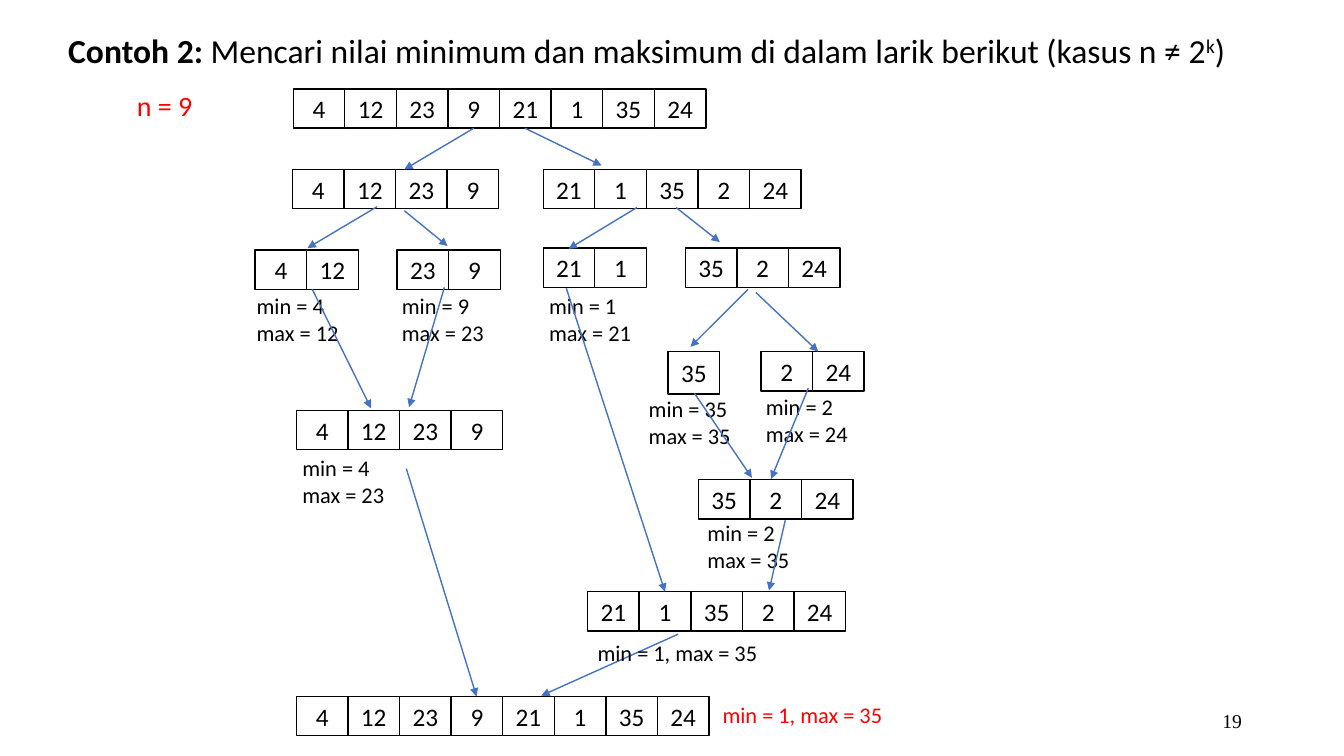
import pptx
import pptx.dml.color
import pptx.enum.shapes
import pptx.enum.text
import pptx.oxml
import pptx.oxml.ns
import pptx.util

Cm = pptx.util.Cm
Pt = pptx.util.Pt
ALIGN = pptx.enum.text.PP_ALIGN
COLORS = {"ink": "000000", "accent": "FF0000", "arrow": "4472C4"}
CELL_W, CELL_H = 1.3, 0.99
LINE_H, INSETS = 0.68, 0.27


def rgb(name):
    """Return the named colour."""
    return pptx.dml.color.RGBColor.from_string(COLORS[name])


def set_font(p, size, color="ink", name="Calibri"):
    """Set the font of a whole paragraph."""
    p.font.name = name
    p.font.size = Pt(size)
    p.font.color.rgb = rgb(color)


def add_label(slide, x, y, w, h, lines, size=16, color="ink"):
    """Add an unwrapped text box with one paragraph per line."""
    tf = slide.shapes.add_textbox(Cm(x), Cm(y), Cm(w), Cm(h)).text_frame
    tf.word_wrap = False
    tf.auto_size = pptx.enum.text.MSO_AUTO_SIZE.SHAPE_TO_FIT_TEXT
    tf.text = "\n".join(lines)
    for p in tf.paragraphs:
        set_font(p, size, color)
    return tf


def add_array(slide, x, y, values, height=CELL_H):
    """Draw an array as a row of adjoining cells."""
    for i, value in enumerate(values):
        sp = slide.shapes.add_shape(
            pptx.enum.shapes.MSO_SHAPE.RECTANGLE,
            Cm(x + i * CELL_W), Cm(y), Cm(CELL_W), Cm(height))
        sp.shadow.inherit = False
        sp.fill.background()
        sp.line.color.rgb = rgb("ink")
        sp.line.width = Pt(1)
        tf = sp.text_frame
        tf.vertical_anchor = pptx.enum.text.MSO_ANCHOR.MIDDLE
        p = tf.paragraphs[0]
        p.text = str(value)
        p.alignment = ALIGN.CENTER
        set_font(p, 18)


def add_arrow(slide, x1, y1, x2, y2):
    """Draw a straight arrow from the first point to the second."""
    line = slide.shapes.add_connector(
        pptx.enum.shapes.MSO_CONNECTOR.STRAIGHT, Cm(x1), Cm(y1), Cm(x2), Cm(y2))
    line.line.color.rgb = rgb("arrow")
    line.line.width = Pt(1)
    qn = pptx.oxml.ns.qn
    ln = line.line._get_or_add_ln()
    ln.append(ln.makeelement(qn("a:tailEnd"), {"type": "triangle"}))
    ln.addnext(ln.makeelement(qn("a:effectLst"), {}))


def add_header(slide, left, top):
    """Place the title and the array length."""
    tf = add_label(slide, left, top, 29.87, 1.27, [""], 24)
    p = tf.paragraphs[0]
    runs = ["Contoh 2: ",
            "Mencari nilai minimum dan maksimum di dalam larik berikut (kasus n ≠ 2",
            "k", ")"]
    for text in runs:
        p.add_run().text = text
    p.runs[0].font.bold = True
    p.runs[2].font._element.set("baseline", "30000")
    add_label(slide, left + 1.73, top + 1.47, 1.93, 1.12, ["n = 9"], 20, "accent")


def add_split(slide, left, top):
    """Draw the halving of the array down to one or two elements."""
    nodes = [
        (0.96, 0, [4, 12, 23, 9, 21, 1, 35, 24]),
        (0.94, 2.03, [4, 12, 23, 9]),
        (7.26, 2.03, [21, 1, 35, 2, 24]),
        (0, 4.06, [4, 12]),
        (3.58, 4.06, [23, 9]),
        (7.26, 4.01, [21, 1]),
        (10.84, 4.01, [35, 2, 24]),
        (10.41, 6.62, [35], 1.07),
        (12.75, 6.62, [2, 24]),
    ]
    results = [
        (-0.21, 5, 4, 12), (3.45, 5, 9, 23), (7.16, 5, 1, 21),
        (9.67, 7.59, 35, 35), (12.62, 7.54, 2, 24),
    ]
    arrows = [
        (5.51, 0.99, 3.76, 2.03), (6.8, 0.99, 8.73, 1.93),
        (3.07, 2.97, 1.32, 4.01), (3.76, 3.07, 4.85, 3.96),
        (9.62, 2.99, 7.9, 4.03), (10.61, 2.99, 11.71, 3.86),
        (12.62, 5.13, 14.19, 6.62), (12.42, 5.05, 10.97, 6.5),
    ]
    add_tree(slide, left, top, nodes, results, arrows)


def add_merge(slide, left, top):
    """Draw the merging of partial results up to the final answer."""
    nodes = [
        (0, 0, [4, 12, 23, 9]),
        (10.13, 1.75, [35, 2, 24]),
        (7.34, 4.57, [21, 1, 35, 2, 24]),
        (0, 7.21, [4, 12, 23, 9, 21, 1, 35, 24]),
    ]
    results = [(-0.1, 0.99, 4, 23), (10.11, 2.61, 2, 35)]
    arrows = [
        (0.4, -3.05, 1.88, -0.05), (3.73, -3.1, 2.84, -0.08),
        (10.03, -0.43, 11.48, 1.7), (12.9, -0.56, 11.96, 1.73),
        (6.8, -3.08, 9.29, 4.57), (12.32, 2.77, 11.91, 4.54),
        (2.77, 1.47, 4.54, 7.21), (9.62, 5.64, 6.17, 7.19),
    ]
    add_tree(slide, left, top, nodes, results, arrows)
    for x, y, color in [(7.34, 5.64, "ink"), (10.49, 7.21, "accent")]:
        add_label(slide, left + x, top + y, 4.6, LINE_H + INSETS,
                  ["min = 1, max = 35"], color=color)


def add_tree(slide, left, top, nodes, results, arrows):
    """Place arrays, their results and arrows relative to a corner."""
    for x, y, *array in nodes:
        add_array(slide, left + x, top + y, *array)
    for x, y, low, high in results:
        add_label(slide, left + x, top + y, 2.59, 2 * LINE_H + INSETS,
                  [f"min = {low}", f"max = {high}"])
    for x1, y1, x2, y2 in arrows:
        add_arrow(slide, left + x1, top + y1, left + x2, top + y2)


def add_page_number(slide, left, top, width, height):
    """Place the right-aligned page number."""
    sp = slide.shapes.add_textbox(Cm(left), Cm(top), Cm(width), Cm(height))
    tf = sp.text_frame
    tf.word_wrap = True
    tf.vertical_anchor = pptx.enum.text.MSO_ANCHOR.MIDDLE
    p = tf.paragraphs[0]
    p.text = "19"
    p.alignment = ALIGN.RIGHT
    set_font(p, 14, name="Times New Roman")


def main():
    """Build the slide and save it."""
    prs = pptx.Presentation()
    prs.slide_width, prs.slide_height = Cm(33.87), Cm(19.05)
    slide = prs.slides.add_slide(prs.slide_layouts[6])
    add_page_number(slide, 23.93, 17.65, 7.62, 1.02)
    add_header(slide, 1.47, 0.64)
    add_split(slide, 6.43, 2.24)
    add_merge(slide, 7.47, 10.34)
    prs.save("out.pptx")


if __name__ == "__main__":
    main()
